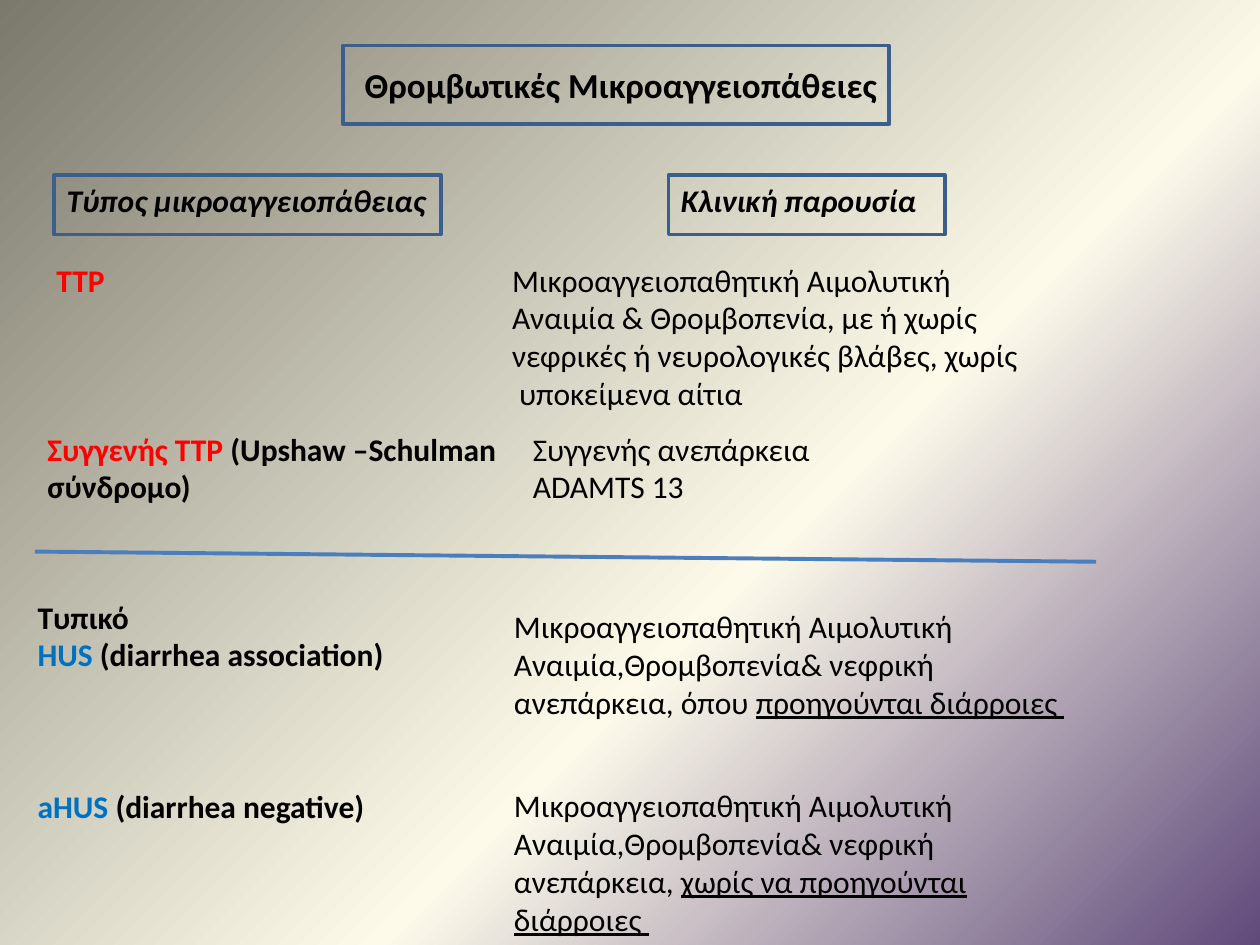
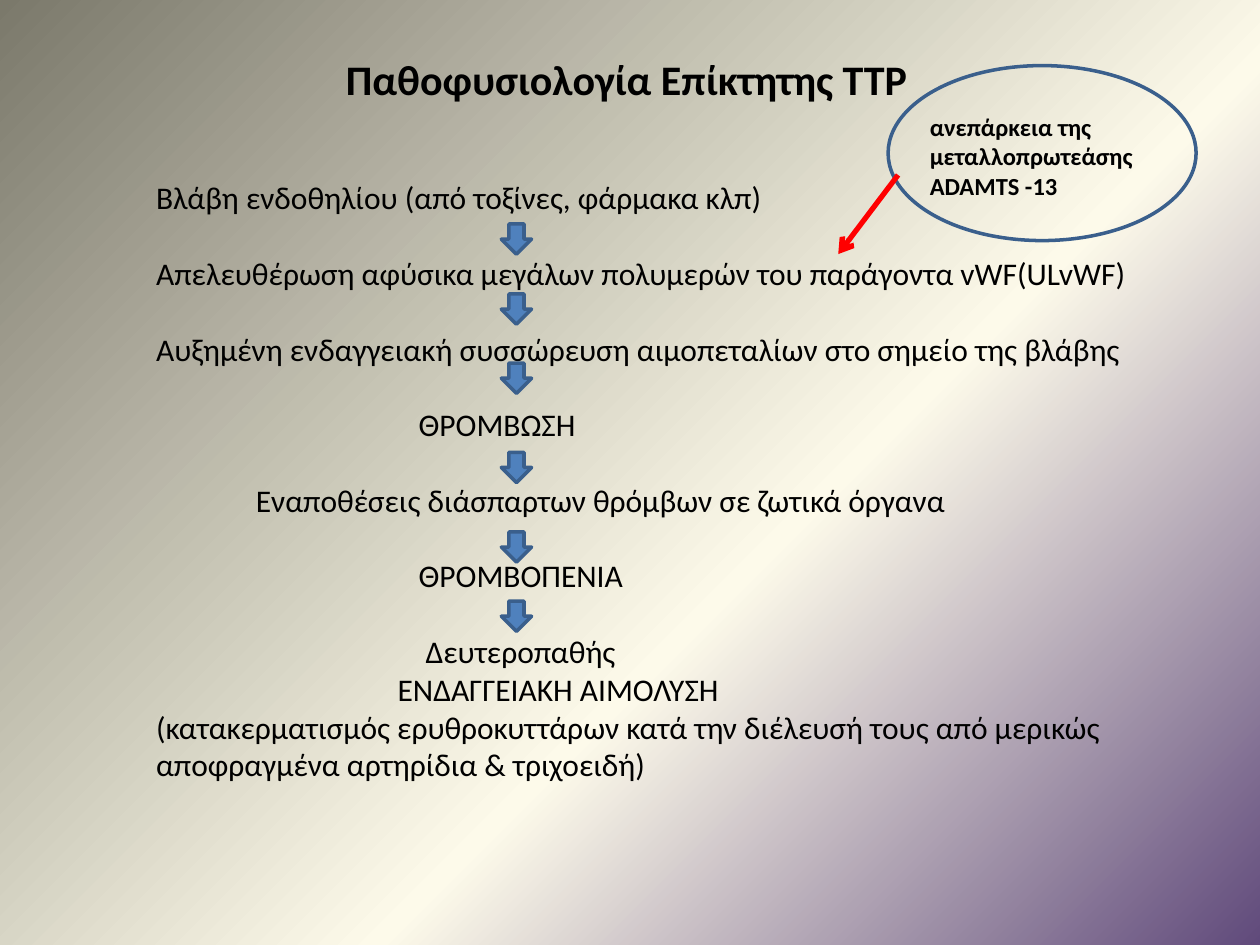
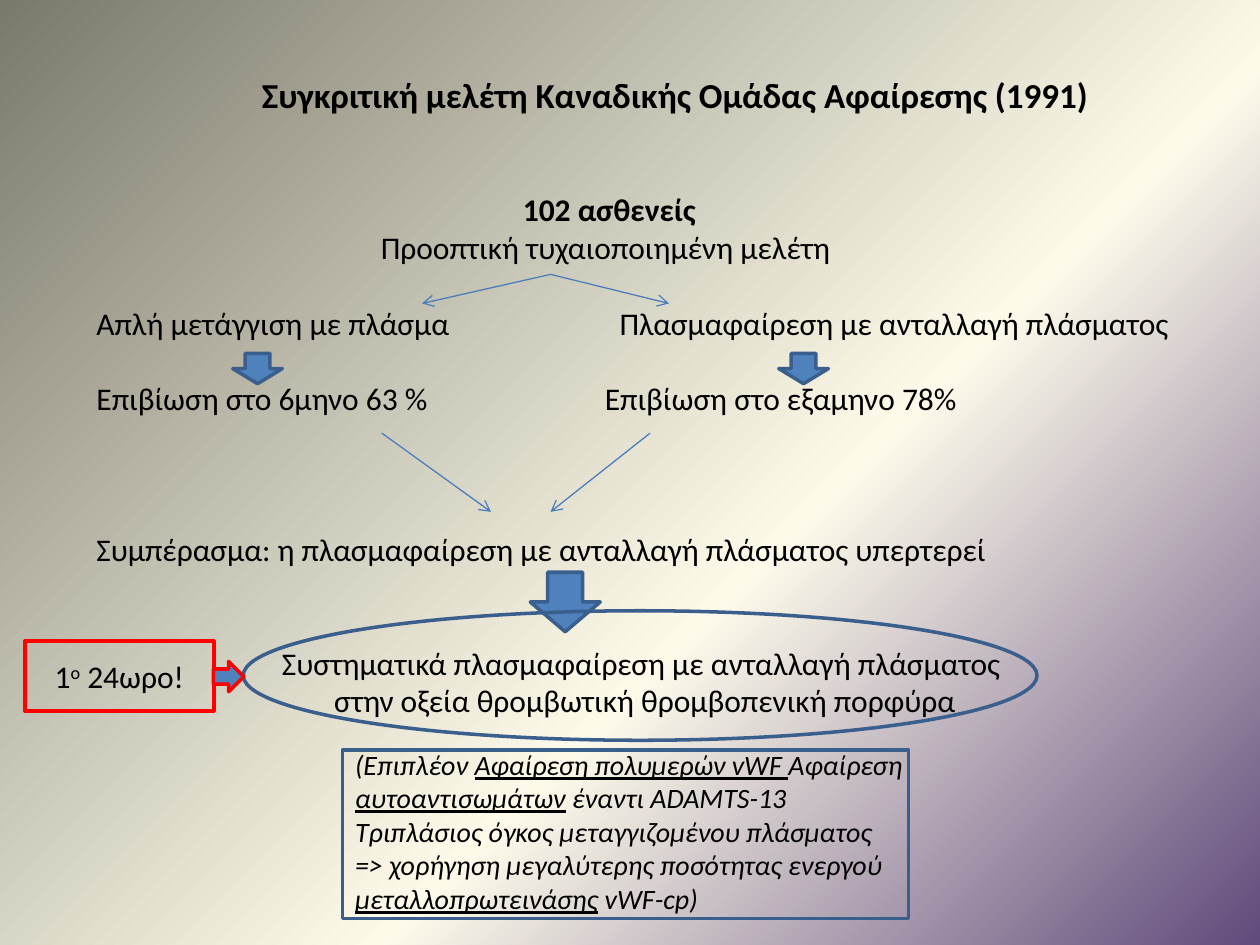
from dataclasses import dataclass

from lxml import etree
from pptx import Presentation
from pptx.dml.color import RGBColor
from pptx.enum.shapes import MSO_CONNECTOR, MSO_SHAPE
from pptx.enum.text import MSO_ANCHOR, MSO_AUTO_SIZE, PP_ALIGN
from pptx.oxml.ns import qn
from pptx.util import Pt

RECTANGLE, ELLIPSE = MSO_SHAPE.RECTANGLE, MSO_SHAPE.OVAL
DOWN_ARROW, RIGHT_ARROW = MSO_SHAPE.DOWN_ARROW, MSO_SHAPE.RIGHT_ARROW
STRAIGHT = MSO_CONNECTOR.STRAIGHT
TOP, MIDDLE = MSO_ANCHOR.TOP, MSO_ANCHOR.MIDDLE
LEFT, CENTER = PP_ALIGN.LEFT, PP_ALIGN.CENTER
NO_AUTOFIT = MSO_AUTO_SIZE.NONE
UNDERLINE, SUPERSCRIPT = "underline", "superscript"


@dataclass(frozen=True)
class Theme:
    font: str = "Calibri"
    text: RGBColor = RGBColor(0, 0, 0)
    red: RGBColor = RGBColor(0xFF, 0, 0)
    blue: RGBColor = RGBColor(0, 0x70, 0xC0)
    fill: RGBColor = RGBColor(0x4F, 0x81, 0xBD)
    outline: RGBColor = RGBColor(0x3A, 0x5F, 0x8C)
    connector: RGBColor = RGBColor(0x4B, 0x7E, 0xBC)
    background: tuple = ((0, "604A7B"), (40, "FDFAEA"), (100, "7B796B"))
    large_title: int = 24
    title: int = 20
    body: int = 18
    remark: int = 16
    note: int = 14
    outline_width: float = 2
    line_height: float = 21.6


theme = Theme()


def add_box(slide, kind, left, top, width, height, line=None, fill=None):
    """Add a preset shape, or a plain text box when kind is None."""
    area = Pt(left), Pt(top), Pt(width), Pt(height)
    if kind is None:
        return slide.shapes.add_textbox(*area)
    box = slide.shapes.add_shape(kind, *area)
    box.shadow.inherit = False
    box.line.color.rgb = line
    box.line.width = Pt(theme.outline_width)
    if fill is None:
        box.fill.background()
    else:
        box.fill.solid()
        box.fill.fore_color.rgb = fill
    return box


def write_text(box, paragraphs, size=theme.body, bold=False, italic=False,
               align=LEFT, anchor=TOP):
    """Write paragraphs, each a list of strings or (string, mark) spans."""
    frame = box.text_frame
    frame.word_wrap = True
    frame.auto_size = NO_AUTOFIT
    frame.vertical_anchor = anchor
    for number, spans in enumerate(paragraphs):
        para = frame.add_paragraph() if number else frame.paragraphs[0]
        para.alignment = align
        font = para.font
        font.name, font.size = theme.font, Pt(size)
        font.bold, font.italic = bold, italic
        font.color.rgb = theme.text
        for span in spans:
            words, mark = (span, None) if isinstance(span, str) else span
            run = para.add_run()
            run.text = words
            if mark == UNDERLINE:
                run.font.underline = True
            elif mark == SUPERSCRIPT:
                run._r.get_or_add_rPr().set("baseline", "30000")
            elif mark is not None:
                run.font.color.rgb = mark


deck = Presentation()
deck.slide_width, deck.slide_height = Pt(720), Pt(540)

# Shared background: radial gradient from the lower right corner
master = deck.slide_master
master.background.fill.gradient()
gradient = master.element.find(".//" + qn("a:gradFill"))
for child in list(gradient):
    gradient.remove(child)
stops = etree.SubElement(gradient, qn("a:gsLst"))
for position, colour in theme.background:
    stop = etree.SubElement(stops, qn("a:gs"), pos=str(position * 1000))
    etree.SubElement(stop, qn("a:srgbClr"), val=colour)
circle = etree.SubElement(gradient, qn("a:path"), path="circle")
etree.SubElement(circle, qn("a:fillToRect"), l="100000", t="100000")

# Slides with their titles: layout, title area, size, wording
title_and_body, title_only = deck.slide_layouts[1], deck.slide_layouts[5]
slides = []
for layout, area, size, wording in (
    (title_only, (196, 26, 312, 45), theme.title, "Θρομβωτικές Μικροαγγειοπάθειες"),
    (title_and_body, (190.5, 26, 350, 38), theme.large_title, "Παθοφυσιολογία Επίκτητης TTP"),
    (title_only, (142.5, 38, 500, 32), theme.title,
     "Συγκριτική μελέτη Καναδικής Ομάδας Αφαίρεσης (1991)"),
):
    slide = deck.slides.add_slide(layout)
    title = slide.shapes.title
    title.left, title.top, title.width, title.height = map(Pt, area)
    write_text(title, [[wording]], size, bold=True, anchor=MIDDLE)
    slides.append(slide)
types_slide, pathway_slide, study_slide = slides

# Slide 1: framed title and column headings
title = types_slide.shapes.title
title.line.color.rgb = theme.outline
title.line.width = Pt(theme.outline_width)
title.text_frame.margin_left, title.text_frame.margin_right = Pt(12.4), 0
for left, width, heading in (
    (31, 221, "Τύπος μικροαγγειοπάθειας"),
    (382, 158, "Κλινική παρουσία"),
):
    box = add_box(types_slide, RECTANGLE, left, 100, width, 34, theme.outline)
    write_text(box, [[heading]], bold=True, italic=True)

# Slide 1: types on the left in bold, presentations on the right
anaemia = [["Μικροαγγειοπαθητική Αιμολυτική"], ["Αναιμία,Θρομβοπενία& νεφρική"]]
for left, top, width, bold, paragraphs in (
    (25.2, 145.4, 200, True, [[("TTP", theme.red)]]),
    (285.5, 145.4, 320, False, [
        ["Μικροαγγειοπαθητική Αιμολυτική"],
        ["Αναιμία & Θρομβοπενία, με ή χωρίς"],
        ["νεφρικές ή νευρολογικές βλάβες, χωρίς"],
        [" υποκείμενα αίτια"]]),
    (20, 242, 289, True, [
        [("Συγγενής TTP ", theme.red), "(Upshaw –Schulman"], ["σύνδρομο)"]]),
    (297.4, 242, 360, False, [["Συγγενής ανεπάρκεια"], ["ADAMTS 13"]]),
    (14.4, 338, 266, True, [
        ["Τυπικό"], [("HUS", theme.blue), " (diarrhea association)"]]),
    (286.6, 343.5, 360, False, anaemia + [
        ["ανεπάρκεια, όπου ", ("προηγούνται διάρροιες ", UNDERLINE)]]),
    (14.4, 446, 266, True, [[("aHUS ", theme.blue), "(diarrhea negative)"]]),
    (286.6, 445.7, 306, False, anaemia + [
        ["ανεπάρκεια, ", ("χωρίς να προηγούνται διάρροιες ", UNDERLINE)]]),
):
    height = 7.2 + theme.line_height * len(paragraphs)
    box = add_box(types_slide, None, left, top, width, height)
    write_text(box, paragraphs, bold=bold)

# Slide 2: steps as indent, gap before in lines, wording
steps = (
    (0, 0, "Βλάβη ενδοθηλίου (από τοξίνες, φάρμακα κλπ)"),
    (0, 1, "Απελευθέρωση αφύσικα μεγάλων πολυμερών του παράγοντα vWF(ULvWF)"),
    (0, 1, "Αυξημένη ενδαγγειακή συσσώρευση αιμοπεταλίων στο σημείο της βλάβης"),
    (150, 1, "ΘΡΟΜΒΩΣΗ"),
    (57, 1, "Εναποθέσεις διάσπαρτων θρόμβων σε ζωτικά όργανα"),
    (150, 1, "ΘΡΟΜΒΟΠΕΝΙΑ"),
    (154, 1, "Δευτεροπαθής"),
    (138, 0, "ΕΝΔΑΓΓΕΙΑΚΗ ΑΙΜΟΛΥΣΗ"),
    (0, 0, "(κατακερματισμός ερυθροκυττάρων κατά την διέλευσή τους από μερικώς "
           "αποφραγμένα αρτηρίδια & τριχοειδή)"),
)
body = pathway_slide.placeholders[1]
body.left, body.top, body.width, body.height = map(Pt, (82, 98.4, 612, 357))
write_text(body, [[wording] for _, _, wording in steps])
for para, (indent, gap, _) in zip(body.text_frame.paragraphs, steps):
    para.space_before = Pt(gap * theme.line_height)
    properties = para._p.get_or_add_pPr()
    properties.set("marL", str(Pt(indent)))
    properties.set("indent", "0")
    properties.insert_element_before(
        etree.Element(qn("a:buNone")), "a:tabLst", "a:defRPr", "a:extLst")

# Slide 2: arrows between steps and the enzyme note
for top in (128, 168, 207.5, 258.5, 304, 343.5):
    add_box(pathway_slide, DOWN_ARROW, 286.5, top, 17.3, 17.3, theme.outline, theme.fill)
add_box(pathway_slide, ELLIPSE, 507.5, 37.5, 176, 100, theme.outline)
box = add_box(pathway_slide, None, 524.2, 60.5, 135, 58)
write_text(box, [["ανεπάρκεια της"], ["μεταλλοπρωτεάσης"], ["ADAMTS -13"]],
           theme.note, bold=True)

# Slide 3: study arms, survival and conclusion
for left, top, width, bold, wording in (
    (291.7, 104.8, 150, True, "102 ασθενείς"),
    (210.5, 126.5, 300, False, "Προοπτική τυχαιοποιημένη μελέτη"),
    (48, 170, 240, False, "Απλή μετάγγιση με πλάσμα"),
    (347, 170, 350, False, "Πλασμαφαίρεση με ανταλλαγή πλάσματος"),
    (48, 213, 240, False, "Επιβίωση στο 6μηνο 63 %"),
    (338.5, 213, 240, False, "Επιβίωση στο εξαμηνο 78%"),
    (48, 299.2, 560, False, "Συμπέρασμα: η πλασμαφαίρεση με ανταλλαγή πλάσματος υπερτερεί"),
):
    box = add_box(study_slide, None, left, top, width, 29)
    write_text(box, [[wording]], bold=bold)
for left, top, width, height in (
    (133, 202, 28.4, 17.3), (445, 202, 28.4, 17.3), (303, 327, 40, 34),
):
    add_box(study_slide, DOWN_ARROW, left, top, width, height, theme.outline, theme.fill)

# Slide 3: recommendation, its timing and the remark below
add_box(study_slide, ELLIPSE, 139, 349, 453.6, 74, theme.outline)
box = add_box(study_slide, None, 48, 364.2, 641, 51)
write_text(box, [["Συστηματικά πλασμαφαίρεση με ανταλλαγή πλάσματος "],
                 ["στην οξεία θρομβωτική θρομβοπενική πορφύρα"]], align=CENTER)
box = add_box(study_slide, RECTANGLE, 14.2, 366.3, 108, 40, theme.red)
write_text(box, [["1", ("ο", SUPERSCRIPT), " 24ωρο!"]], align=CENTER, anchor=MIDDLE)
add_box(study_slide, RIGHT_ARROW, 122, 378, 17.3, 17.3, theme.red, theme.fill)
add_box(study_slide, RECTANGLE, 195.8, 428.6, 323.5, 96.4, theme.outline)
box = add_box(study_slide, None, 195.8, 423.4, 408, 104)
write_text(box, [
    ["(Επιπλέον ", ("Αφαίρεση πολυμερών vWF ", UNDERLINE), "Αφαίρεση ",
     ("αυτοαντισωμάτων", UNDERLINE), " έναντι ADAMTS-13"],
    ["Τριπλάσιος όγκος μεταγγιζομένου πλάσματος"],
    ["=> χορήγηση μεγαλύτερης ποσότητας ενεργού ",
     ("μεταλλοπρωτεινάσης", UNDERLINE), " vWF-cp)"],
], theme.remark, italic=True)

# Divider and thin arrows: slide, ends, colour, width, arrowhead
for slide, ends, colour, width, pointed in (
    (types_slide, (20, 315.2, 626.4, 321), theme.connector, 2.25, False),
    (pathway_slide, (513.2, 100, 479, 145.2), theme.red, 3, True),
    (study_slide, (314.6, 156.8, 241.2, 173.4), theme.connector, 0.75, True),
    (study_slide, (314.6, 156.8, 382.3, 173.4), theme.connector, 0.75, True),
    (study_slide, (218.2, 247.5, 280.6, 292.5), theme.connector, 0.75, True),
    (study_slide, (371.5, 247.5, 314.6, 292.5), theme.connector, 0.75, True),
):
    line = slide.shapes.add_connector(STRAIGHT, *map(Pt, ends))
    line.line.color.rgb = colour
    line.line.width = Pt(width)
    if pointed:
        etree.SubElement(line.line._get_or_add_ln(), qn("a:tailEnd"), type="arrow")
    etree.SubElement(line._element.spPr, qn("a:effectLst"))

deck.save("out.pptx")
